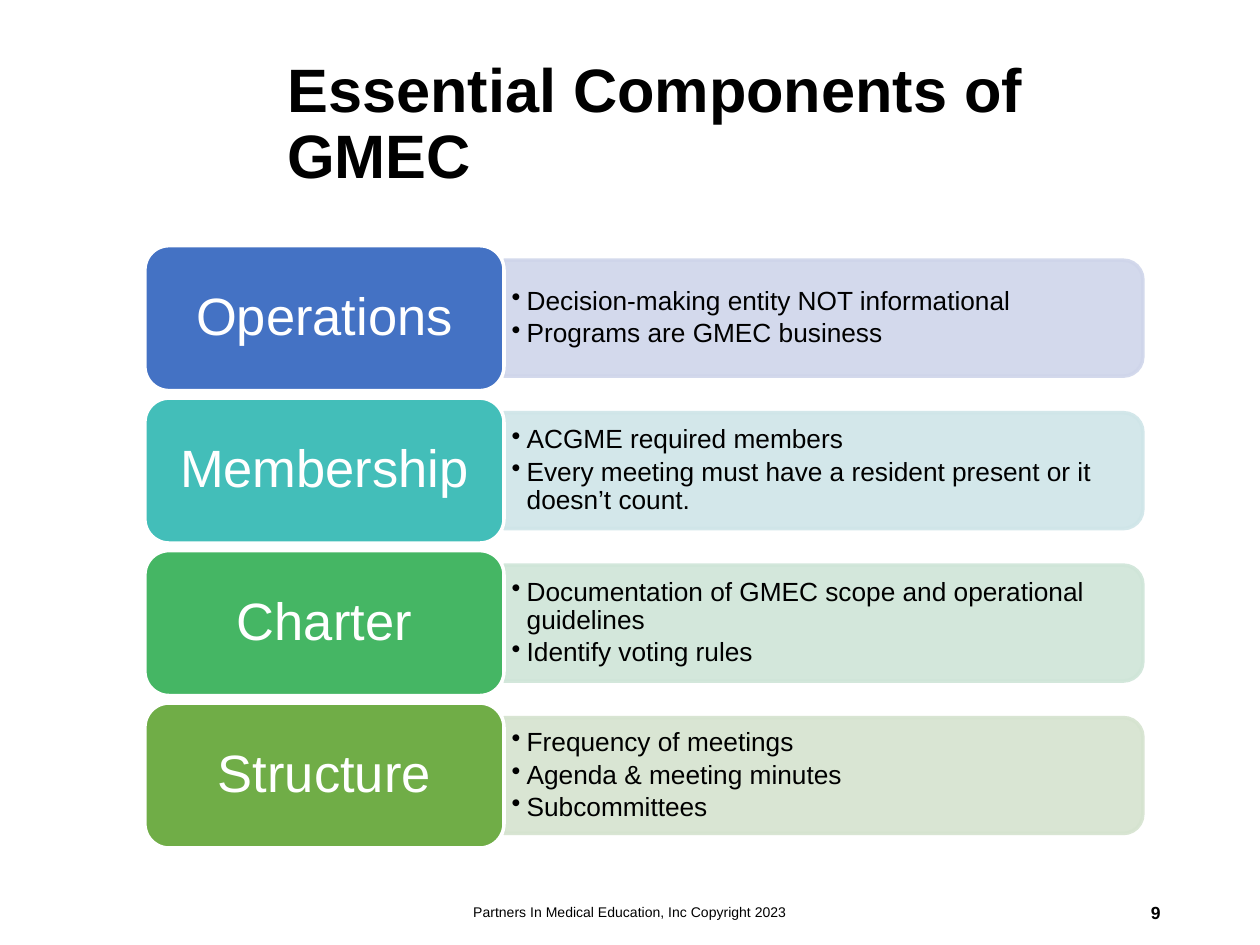
from dataclasses import dataclass

from lxml import etree
from pptx import Presentation
from pptx.dml.color import RGBColor
from pptx.enum.shapes import MSO_SHAPE
from pptx.enum.text import MSO_ANCHOR, MSO_AUTO_SIZE, PP_ALIGN
from pptx.oxml.ns import qn
from pptx.util import Inches, Pt

ROUND_RECT = MSO_SHAPE.ROUNDED_RECTANGLE
ROUND_TOP = MSO_SHAPE.ROUND_2_SAME_RECTANGLE
MIDDLE = MSO_ANCHOR.MIDDLE
NO_FIT = MSO_AUTO_SIZE.NONE
LEFT, CENTER, RIGHT = PP_ALIGN.LEFT, PP_ALIGN.CENTER, PP_ALIGN.RIGHT


@dataclass(frozen=True)
class Theme:
    font: str = "Arial"
    ink: str = "000000"
    paper: str = "FFFFFF"
    title: int = 35
    label: int = 30
    bullet: int = 15
    number: int = 10
    footer: int = 8
    outline: int = 2
    bar_opacity: int = 90


THEME = Theme()

# label, label colour, bar colour, bullets
COMPONENTS = [
    ("Operations", "4472C4", "CFD5EA",
     ["Decision-making entity NOT informational", "Programs are GMEC business"]),
    ("Membership", "43BEB9", "CFE5E8",
     ["ACGME required members",
      "Every meeting must have a resident present or it doesn’t count."]),
    ("Charter", "45B664", "CFE5D8",
     ["Documentation of GMEC scope and operational guidelines",
      "Identify voting rules"]),
    ("Structure", "70AD47", "D5E3CF",
     ["Frequency of meetings", "Agenda & meeting minutes", "Subcommittees"]),
]


def rgb(color):
    return RGBColor.from_string(color)


def prepare_frame(shape, inset_x=0.1, inset_y=0.05):
    tf = shape.text_frame
    tf.word_wrap = True
    tf.auto_size = NO_FIT
    tf.vertical_anchor = MIDDLE
    tf.margin_left = tf.margin_right = Inches(inset_x)
    tf.margin_top = tf.margin_bottom = Inches(inset_y)
    return tf


def write(p, text, size, color=THEME.ink, bold=False, align=LEFT, spacing=None):
    p.alignment = align
    p.line_spacing = spacing
    r = p.add_run()
    r.text = text
    r.font.name = THEME.font
    r.font.size = Pt(size)
    r.font.bold = bold
    r.font.color.rgb = rgb(color)


def add_bullet(p):
    pPr = p._p.get_or_add_pPr()
    pPr.set("marL", str(Inches(0.12)))
    pPr.set("indent", str(-Inches(0.12)))
    color = etree.SubElement(pPr, qn("a:buClr"))
    etree.SubElement(color, qn("a:srgbClr"), val=THEME.ink)
    etree.SubElement(pPr, qn("a:buChar"), char="•")


def add_block(s, kind, box, fill, line):
    sp = s.shapes.add_shape(kind, *map(Inches, box))
    sp.shadow.inherit = False
    sp.fill.solid()
    sp.fill.fore_color.rgb = rgb(fill)
    sp.line.color.rgb = rgb(line)
    sp.line.width = Pt(THEME.outline)
    return sp


def add_title(s, box, text):
    sp = s.shapes.title
    sp.left, sp.top, sp.width, sp.height = map(Inches, box)
    tf = prepare_frame(sp)
    write(tf.paragraphs[0], text, THEME.title, bold=True, spacing=0.9)


def add_bar(s, box, color):
    """Bar rounded on its right side: a round-top shape turned a quarter."""
    x, y, w, h = box
    turned = (x + (w - h) / 2, y + (h - w) / 2, h, w)
    sp = add_block(s, ROUND_TOP, turned, color, color)
    sp.rotation = 90
    for clr in sp._element.spPr.iter(qn("a:srgbClr")):
        etree.SubElement(clr, qn("a:alpha"), val=str(THEME.bar_opacity * 1000))


def add_bullets(s, box, items):
    sp = s.shapes.add_textbox(*map(Inches, box))
    tf = prepare_frame(sp, 0.06, 0.03)
    for i, item in enumerate(items):
        p = tf.add_paragraph() if i else tf.paragraphs[0]
        p.level = 1
        p.space_before = Pt(0)
        p.space_after = Pt(THEME.bullet * 0.15)
        add_bullet(p)
        write(p, item, THEME.bullet, spacing=0.9)


def add_label(s, box, text, color):
    sp = add_block(s, ROUND_RECT, box, color, THEME.paper)
    tf = prepare_frame(sp, 0.12, 0.06)
    write(tf.paragraphs[0], text, THEME.label, THEME.paper, align=CENTER, spacing=0.9)


def add_component_list(s, box, components):
    x, y, w, h = box
    gap, label_w = 0.06, 2.85
    row_h = (h - gap * (len(components) - 1)) / len(components)
    bar_h = row_h * 0.8
    for i, (label, color, tint, items) in enumerate(components):
        top = y + i * (row_h + gap)
        bar_x, bar_y, bar_w = x + label_w, top + (row_h - bar_h) / 2, w - label_w
        add_bar(s, (bar_x, bar_y, bar_w, bar_h), tint)
        add_bullets(s, (bar_x, bar_y + 0.05, bar_w - 0.05, bar_h - 0.1), items)
        add_label(s, (x, top, label_w, row_h), label, color)


def add_footer(s, box, text, size, align, bold=False):
    sp = s.shapes.add_textbox(*map(Inches, box))
    write(prepare_frame(sp).paragraphs[0], text, size, bold=bold, align=align)


def main():
    prs = Presentation()
    prs.slide_width, prs.slide_height = Inches(10), Inches(7.5)
    s = prs.slides.add_slide(prs.slide_layouts.get_by_name("Title Only"))
    add_title(s, (2.18, 0.27, 7.14, 1.45), "Essential Components of GMEC")
    add_component_list(s, (1.15, 1.95, 7.92, 4.78), COMPONENTS)
    add_footer(s, (7.06, 7.04, 2.25, 0.4), "9", THEME.number, RIGHT, bold=True)
    add_footer(s, (3.31, 7.04, 3.38, 0.4),
               "Partners In Medical Education, Inc Copyright 2023", THEME.footer, CENTER)
    prs.save("out.pptx")


if __name__ == "__main__":
    main()
